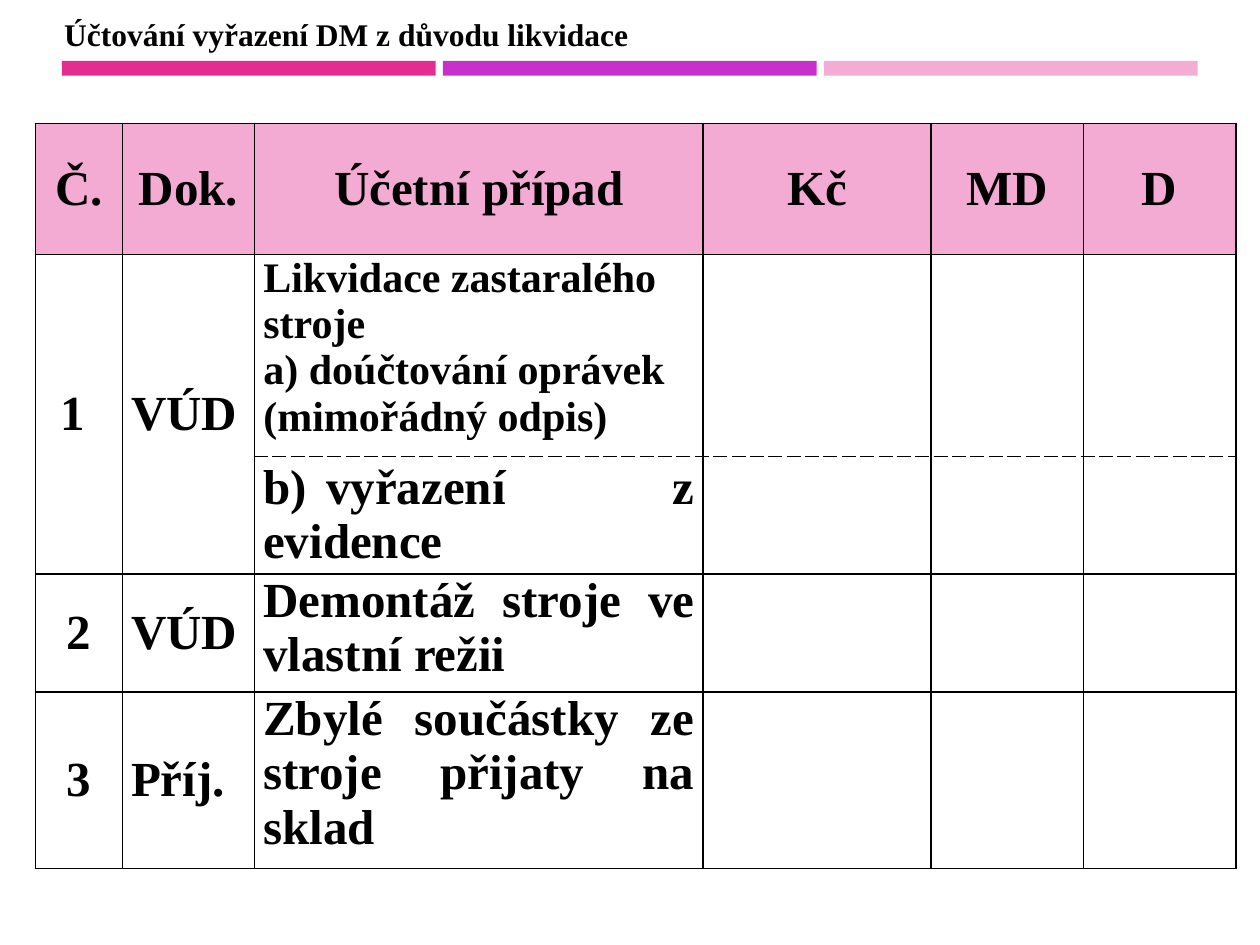
from lxml import etree
from pptx import Presentation
from pptx.dml.color import RGBColor
from pptx.enum.shapes import MSO_SHAPE
from pptx.enum.text import MSO_ANCHOR, MSO_AUTO_SIZE, PP_ALIGN
from pptx.oxml.ns import qn
from pptx.util import Pt

RECTANGLE = MSO_SHAPE.RECTANGLE
TOP, MIDDLE = MSO_ANCHOR.TOP, MSO_ANCHOR.MIDDLE
LEFT, CENTER, JUSTIFY = PP_ALIGN.LEFT, PP_ALIGN.CENTER, PP_ALIGN.JUSTIFY
FIT_SHAPE = MSO_AUTO_SIZE.SHAPE_TO_FIT_TEXT

FONT = "Times New Roman"
COLORS = {"ink": "000000", "header": "F4ABD3"}
BAR_COLORS = ["E32D91", "C830CC", "F3ACD3"]
BAR_LEFT, BAR_TOP, BAR_WIDTH, BAR_HEIGHT, BAR_STEP = 35.4, 34.8, 213.6, 8.4, 217.7

TITLE = "Účtování vyřazení DM z důvodu likvidace"
HEADINGS = ["Č.", "Dok.", "Účetní případ", "Kč", "MD", "D"]
ENTRIES = [
    ("1 ", "VÚD", "Likvidace zastaralého stroje\na) doúčtování oprávek (mimořádný odpis)"),
    ("", "", "b)\tvyřazení z evidence"),
    ("2", "VÚD", "Demontáž stroje ve vlastní režii"),
    ("3", "Příj.", "Zbylé součástky ze stroje přijaty na sklad"),
]
COLUMN_WIDTHS = [49.7, 75.6, 256.3, 130.3, 87.1, 87.1]
ROW_HEIGHTS = [74.9, 115.2, 67.2, 67.4, 100.8]
DASHED_ROW, TABBED_ROW, CASE_COLUMN = 1, 2, 2
TAB_STOP = 36


def style_paragraphs(frame, size, align):
    """Give every paragraph its alignment and bold dark type."""
    for para in frame.paragraphs:
        para.alignment = align
        for span in para.runs:
            span.font.name = FONT
            span.font.size = Pt(size)
            span.font.bold = True
            span.font.color.rgb = RGBColor.from_string(COLORS["ink"])


def add_border(cell, side, dash):
    """Draw one thin edge of a cell."""
    edge = etree.SubElement(cell._tc.get_or_add_tcPr(), qn("a:ln" + side), w=str(Pt(1)))
    paint = etree.SubElement(edge, qn("a:solidFill"))
    etree.SubElement(paint, qn("a:srgbClr"), val=COLORS["ink"])
    etree.SubElement(edge, qn("a:prstDash"), val=dash)


def add_bars(slide):
    """Place the three bars under the title at an equal step."""
    for index, color in enumerate(BAR_COLORS):
        bar = slide.shapes.add_shape(
            RECTANGLE, Pt(BAR_LEFT + index * BAR_STEP), Pt(BAR_TOP), Pt(BAR_WIDTH), Pt(BAR_HEIGHT))
        bar.shadow.inherit = False
        bar.fill.solid()
        bar.fill.fore_color.rgb = RGBColor.from_string(color)
        bar.line.fill.background()


def add_title(slide):
    """Set the title in its placeholder."""
    box = slide.shapes.title
    box.left, box.top, box.width, box.height = Pt(29.5), Pt(5), Pt(339.8), Pt(28.8)
    frame = box.text_frame
    frame.text = TITLE
    frame.word_wrap = False
    frame.auto_size = FIT_SHAPE
    frame.vertical_anchor = TOP
    style_paragraphs(frame, 18, LEFT)


def fill_cell(cell, row, column, text):
    """Write and format one cell of the ledger."""
    dashed_below = row == DASHED_ROW and column >= CASE_COLUMN
    dashed_above = row == DASHED_ROW + 1 and column >= CASE_COLUMN
    for side, dashed in (("L", False), ("R", False), ("T", dashed_above), ("B", dashed_below)):
        add_border(cell, side, "sysDash" if dashed else "solid")
    if row == 0:
        cell.fill.solid()
        cell.fill.fore_color.rgb = RGBColor.from_string(COLORS["header"])
    else:
        cell.fill.background()
    if not text:
        return
    is_case = row > 0 and column == CASE_COLUMN
    cell.margin_left = cell.margin_right = Pt(5)
    cell.margin_top = cell.margin_bottom = 0
    cell.vertical_anchor = TOP if is_case and row != TABBED_ROW else MIDDLE
    cell.text_frame.text = text
    if row == 0 or column == 0:
        align = CENTER
    else:
        align = JUSTIFY if is_case and row != DASHED_ROW else LEFT
    style_paragraphs(cell.text_frame, 24 if is_case and row == DASHED_ROW else 28, align)
    if "\t" in text:
        properties = cell.text_frame.paragraphs[0]._p.get_or_add_pPr()
        stops = etree.SubElement(properties, qn("a:tabLst"))
        etree.SubElement(stops, qn("a:tab"), pos=str(Pt(TAB_STOP)), algn="l")


def add_ledger(slide):
    """Build the table of accounting entries."""
    rows = [HEADINGS] + [entry + ("",) * 3 for entry in ENTRIES]
    table = slide.shapes.add_table(
        len(rows), len(HEADINGS), Pt(20.2), Pt(70.6),
        Pt(sum(COLUMN_WIDTHS)), Pt(sum(ROW_HEIGHTS))).table
    table.horz_banding = False
    for column, width in zip(table.columns, COLUMN_WIDTHS):
        column.width = Pt(width)
    for row, height in zip(table.rows, ROW_HEIGHTS):
        row.height = Pt(height)
    for row, texts in enumerate(rows):
        for column, text in enumerate(texts):
            fill_cell(table.cell(row, column), row, column, text)
    for column in range(CASE_COLUMN):
        table.cell(DASHED_ROW, column).merge(table.cell(DASHED_ROW + 1, column))


def main():
    """Build and save the slide."""
    deck = Presentation()
    deck.slide_width, deck.slide_height = Pt(720), Pt(540)
    slide = deck.slides.add_slide(deck.slide_layouts[5])
    add_bars(slide)
    add_title(slide)
    add_ledger(slide)
    deck.save("out.pptx")


if __name__ == "__main__":
    main()
